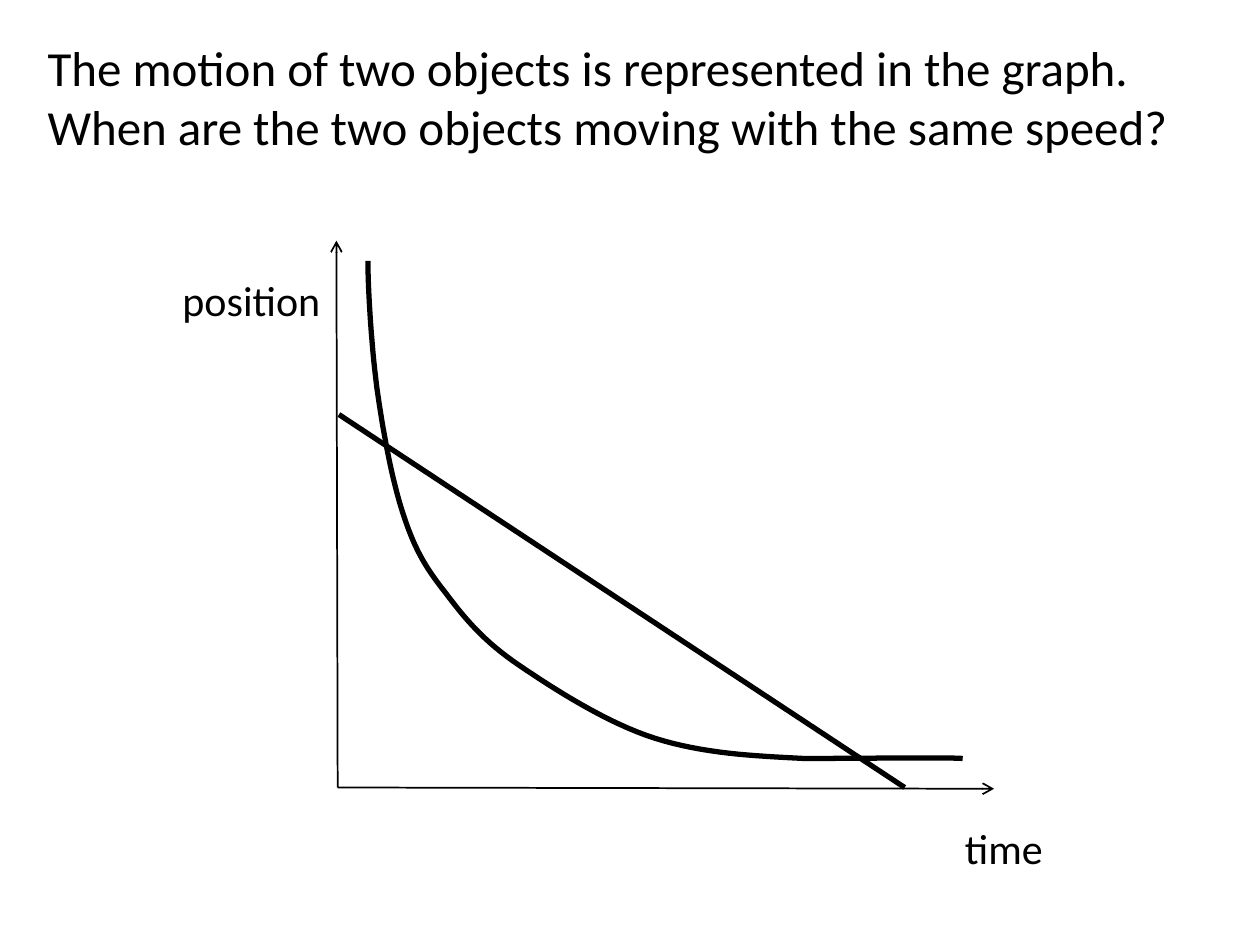
from dataclasses import dataclass

from lxml.etree import SubElement
from pptx import Presentation
from pptx.dml.color import RGBColor
from pptx.enum.shapes import MSO_CONNECTOR as Conn
from pptx.oxml.ns import qn
from pptx.util import Inches, Pt


@dataclass(frozen=True)
class Theme:
    font: str = "Calibri"
    ink: RGBColor = RGBColor(0, 0, 0)
    question_size: int = 28
    label_size: int = 24
    axis_width: int = 1
    plot_width: int = 3


def bezier_points(start, segments, steps=16):
    """Sample a chain of cubic curves; each segment is two controls and an end."""
    points = [start]
    for c1, c2, end in segments:
        for i in range(1, steps + 1):
            t = i / steps
            u = 1 - t
            points.append(tuple(
                u**3 * a + 3 * u * u * t * b + 3 * u * t * t * c + t**3 * d
                for a, b, c, d in zip(start, c1, c2, end)))
        start = end
    return points


class GraphSlide:
    def __init__(self, prs, theme):
        self.theme = theme
        self.s = prs.slides.add_slide(prs.slide_layouts[6])

    def text(self, text, left, top, width, height, *, size):
        box = self.s.shapes.add_textbox(
            Inches(left), Inches(top), Inches(width), Inches(height))
        tf = box.text_frame
        tf.word_wrap = True
        r = tf.paragraphs[0].add_run()
        r.text = text
        r.font.name = self.theme.font
        r.font.size = Pt(size)
        r.font.color.rgb = self.theme.ink

    def style_line(self, sp, width):
        sp.line.color.rgb = self.theme.ink
        sp.line.width = Pt(width)

    def line(self, start, end, *, width, arrow=False):
        cx = self.s.shapes.add_connector(
            Conn.STRAIGHT, *(Inches(v) for v in (*start, *end)))
        self.style_line(cx, width)
        if arrow:
            SubElement(cx.line._get_or_add_ln(), qn("a:tailEnd"), type="arrow")
        SubElement(cx._element.spPr, qn("a:effectLst"))

    def curve(self, points, *, width):
        start, *rest = [(Inches(x), Inches(y)) for x, y in points]
        builder = self.s.shapes.build_freeform(*start)
        builder.add_line_segments(rest, close=False)
        sp = builder.convert_to_shape()
        sp.shadow.inherit = False
        sp.fill.background()
        self.style_line(sp, width)


def main():
    prs = Presentation()
    prs.slide_width, prs.slide_height = Inches(10), Inches(7.5)
    theme = Theme()
    slide = GraphSlide(prs, theme)

    slide.text("position", 1.35, 2.13, 1.34, 0.5, size=theme.label_size)
    slide.text("time", 7.56, 6.48, 1.09, 0.47, size=theme.label_size)

    curved_motion = bezier_points((2.92, 2.07), [
        ((2.92, 2.29), (2.95, 2.8), (3, 3.14)),
        ((3.05, 3.48), (3.12, 3.85), (3.21, 4.11)),
        ((3.3, 4.38), (3.39, 4.52), (3.54, 4.71)),
        ((3.69, 4.91), (3.84, 5.09), (4.12, 5.28)),
        ((4.4, 5.47), (4.82, 5.74), (5.2, 5.86)),
        ((5.58, 5.98), (5.98, 6), (6.39, 6.02)),
        ((6.69, 6.02), (7.56, 6.01), (7.64, 6.02)),
    ])
    slide.curve(curved_motion, width=theme.plot_width)
    slide.line((2.69, 3.29), (7.18, 6.25), width=theme.plot_width)

    origin = (2.68, 6.25)
    for axis_end in ((7.89, 6.26), (2.67, 1.91)):
        slide.line(origin, axis_end, width=theme.axis_width, arrow=True)

    slide.text("The motion of two objects is represented in the graph. "
               "When are the two objects moving with the same speed?",
               0.28, 0.25, 9.26, 1.04, size=theme.question_size)
    prs.save("out.pptx")


if __name__ == "__main__":
    main()
